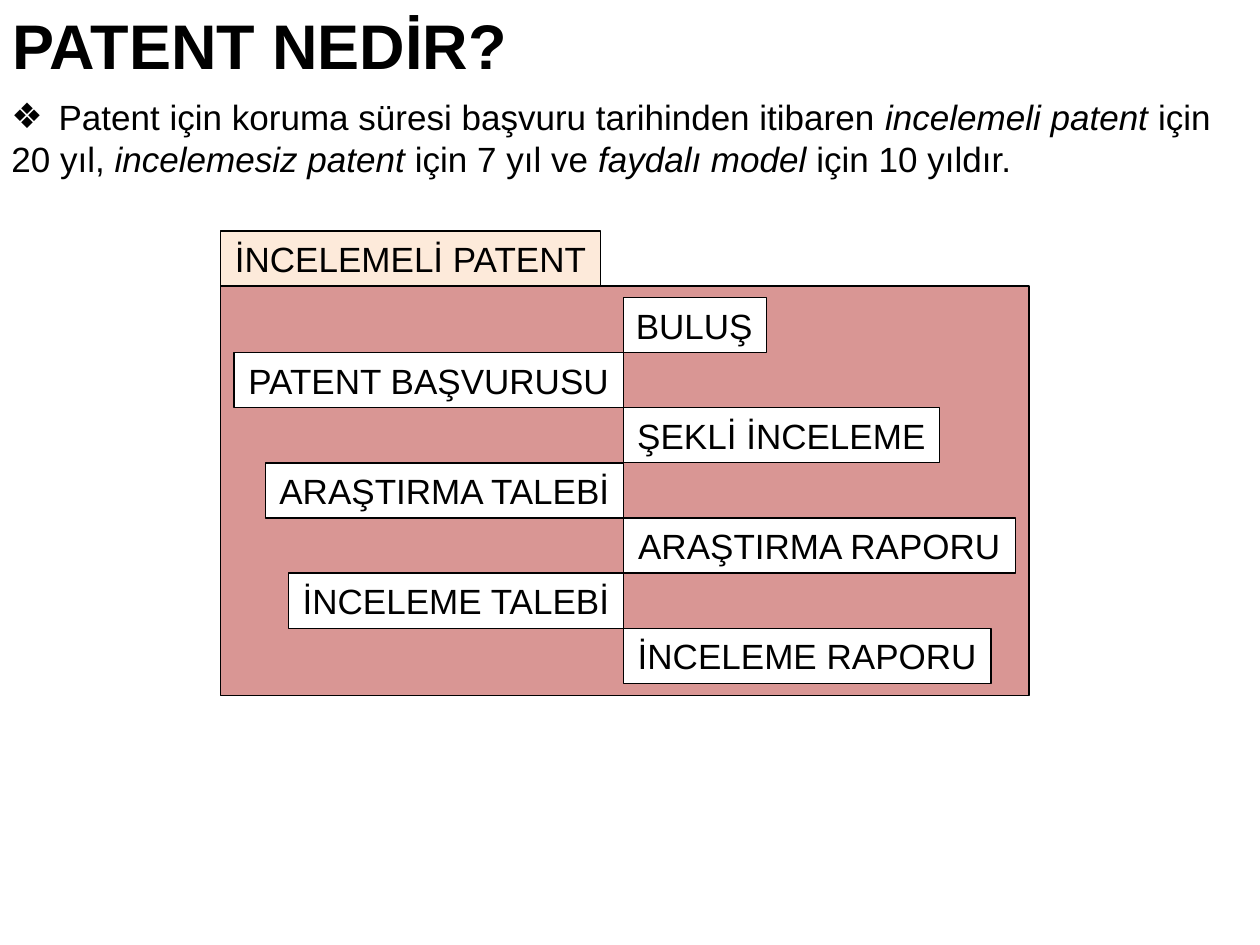
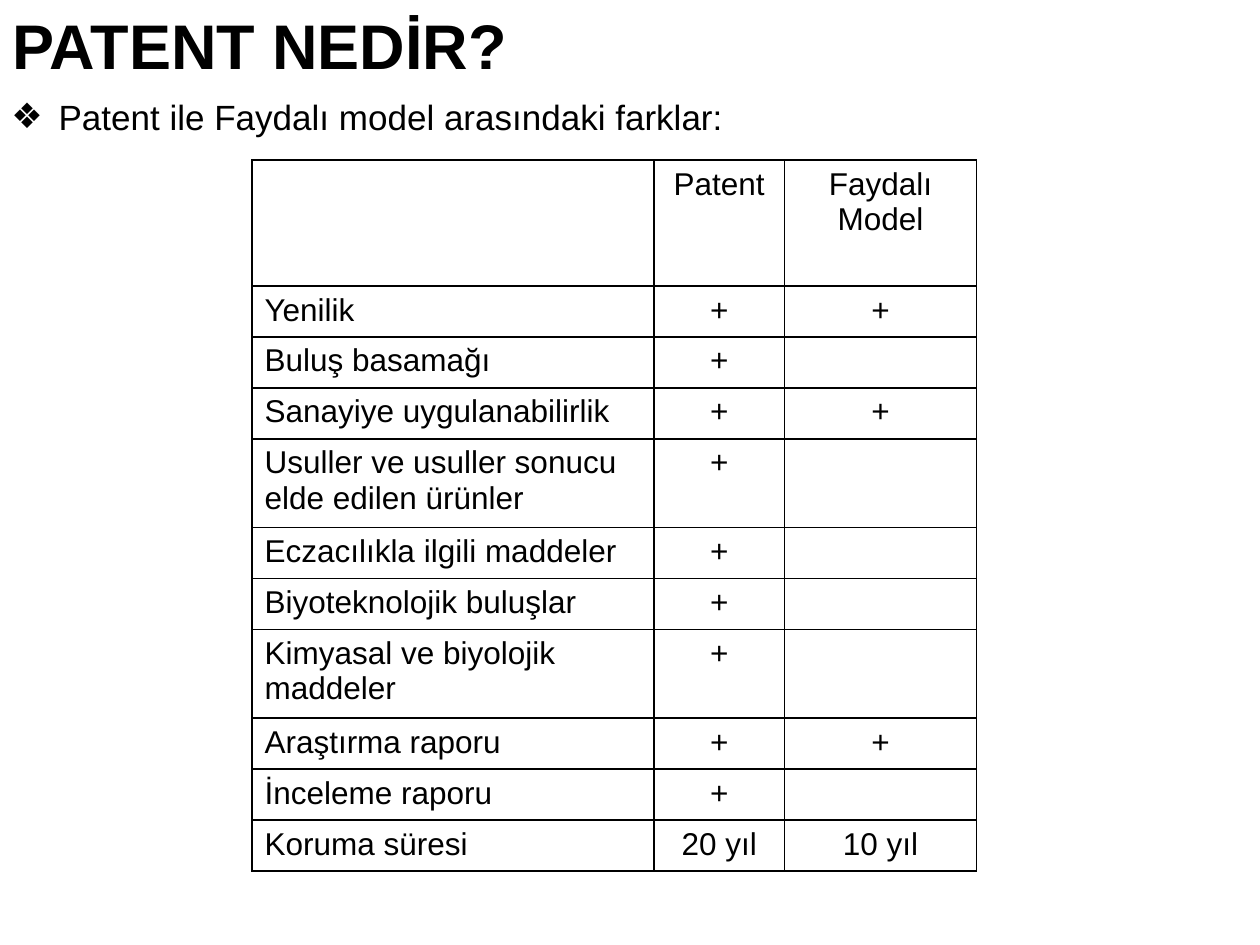
from dataclasses import dataclass

from lxml import etree
from pptx import Presentation
from pptx.dml.color import RGBColor
from pptx.enum.shapes import MSO_SHAPE
from pptx.enum.text import MSO_ANCHOR, MSO_AUTO_SIZE, PP_ALIGN
from pptx.oxml.ns import qn
from pptx.util import Pt

RECTANGLE = MSO_SHAPE.RECTANGLE
LEFT, CENTER = PP_ALIGN.LEFT, PP_ALIGN.CENTER
TOP, MIDDLE = MSO_ANCHOR.TOP, MSO_ANCHOR.MIDDLE
NO_AUTOFIT = MSO_AUTO_SIZE.NONE


@dataclass(frozen=True)
class Theme:
    font: str = "Arial"
    ink: RGBColor = RGBColor(0, 0, 0)
    paper: RGBColor = RGBColor(255, 255, 255)
    panel: RGBColor = RGBColor(0xD9, 0x96, 0x94)
    tab: RGBColor = RGBColor(0xFD, 0xEA, 0xDA)
    title_size: float = 36
    body_size: float = 20
    table_size: float = 18
    bullet: str = "❖"
    bullet_indent: float = 27


class Deck:
    """Holds the style and the slide being built."""

    def __init__(self, theme):
        self.theme = theme
        self.file = Presentation()
        self.file.slide_width, self.file.slide_height = Pt(720), Pt(540)
        self.slide = None

    def style(self, paragraph, size, align=LEFT, bold=False):
        paragraph.alignment = align
        font = paragraph.font
        font.name, font.size, font.bold = self.theme.font, Pt(size), bold
        font.color.rgb = self.theme.ink

    def place(self, placeholder, left, top, width, height):
        placeholder.left, placeholder.top = Pt(left), Pt(top)
        placeholder.width, placeholder.height = Pt(width), Pt(height)
        frame = placeholder.text_frame
        frame.word_wrap, frame.auto_size = True, NO_AUTOFIT
        frame.vertical_anchor = TOP
        return frame

    def new_slide(self, title):
        self.slide = self.file.slides.add_slide(self.file.slide_layouts[1])
        heading = self.place(self.slide.shapes.title, 0, 0, 720, 51)
        heading.text = title
        self.style(heading.paragraphs[0], self.theme.title_size, bold=True)

    def body(self, lines, width):
        """Each line is a list of (text, italic); the first line has the bullet."""
        frame = self.place(self.slide.placeholders[1], -0.7, 51, width, 55.5)
        for number, line in enumerate(lines):
            paragraph = frame.paragraphs[0] if number == 0 else frame.add_paragraph()
            for text, italic in line:
                run = paragraph.add_run()
                run.text, run.font.italic = text, italic
            paragraph.space_before = Pt(0)
            self.style(paragraph, self.theme.body_size)
            self.bullet(paragraph, shown=number == 0)

    def bullet(self, paragraph, shown):
        indent = Pt(self.theme.bullet_indent) if shown else 0
        properties = paragraph._p.get_or_add_pPr()
        properties.set("marL", str(indent))
        properties.set("indent", str(-indent))
        mark = etree.Element(qn("a:buChar" if shown else "a:buNone"))
        if shown:
            mark.set("char", self.theme.bullet)
        properties.find(qn("a:defRPr")).addprevious(mark)

    def box(self, shapes, left, top, width, height, fill, text="",
            align=CENTER, line=0.75):
        shape = shapes.add_shape(RECTANGLE, Pt(left), Pt(top), Pt(width), Pt(height))
        shape.shadow.inherit = False
        shape.fill.solid()
        shape.fill.fore_color.rgb = fill
        shape.line.color.rgb, shape.line.width = self.theme.ink, Pt(line)
        if text:
            frame = shape.text_frame
            frame.word_wrap, frame.vertical_anchor = False, MIDDLE
            frame.text = text
            self.style(frame.paragraphs[0], self.theme.body_size, align)

    def table(self, rows, left, top, widths, heights):
        table = self.slide.shapes.add_table(
            len(rows), len(widths), Pt(left), Pt(top),
            Pt(sum(widths)), Pt(sum(heights))).table
        table.first_row = table.horz_banding = False
        for column, width in zip(table.columns, widths):
            column.width = Pt(width)
        for row, height, texts in zip(table.rows, heights, rows):
            row.height = Pt(height)
            for number, (cell, text) in enumerate(zip(row.cells, texts)):
                cell.text = text
                self.style(cell.text_frame.paragraphs[0], self.theme.table_size,
                           CENTER if number else LEFT)
                self.borders(cell)
                cell.fill.background()

    def borders(self, cell):
        properties = cell._tc.get_or_add_tcPr()
        for side in "LRTB":
            edge = etree.SubElement(properties, qn(f"a:ln{side}"), w=str(Pt(1)))
            fill = etree.SubElement(edge, qn("a:solidFill"))
            etree.SubElement(fill, qn("a:srgbClr"), val=str(self.theme.ink))


TITLE = "PATENT NEDİR?"

# Steps of an examined patent with box widths, alternating right and left
STEPS = [
    ("BULUŞ", 82), ("PATENT BAŞVURUSU", 222.5), ("ŞEKLİ İNCELEME", 180.7),
    ("ARAŞTIRMA TALEBİ", 204.5), ("ARAŞTIRMA RAPORU", 224),
    ("İNCELEME TALEBİ", 191.3), ("İNCELEME RAPORU", 210.2),
]

DIFFERENCES = [
    ("", "Patent", "Faydalı Model"),
    ("Yenilik", "+", "+"),
    ("Buluş basamağı", "+", ""),
    ("Sanayiye uygulanabilirlik", "+", "+"),
    ("Usuller ve usuller sonucu elde edilen ürünler", "+", ""),
    ("Eczacılıkla ilgili maddeler", "+", ""),
    ("Biyoteknolojik buluşlar", "+", ""),
    ("Kimyasal ve biyolojik maddeler", "+", ""),
    ("Araştırma raporu", "+", "+"),
    ("İnceleme raporu", "+", ""),
    ("Koruma süresi", "20 yıl", "10 yıl"),
]


def protection_slide(deck):
    deck.new_slide(TITLE)
    deck.body([
        [("Patent için koruma süresi başvuru tarihinden itibaren ", False),
         ("incelemeli patent", True), (" için", False)],
        [("20 yıl, ", False), ("incelemesiz patent", True),
         (" için 7 yıl ve ", False), ("faydalı model ", True),
         ("için 10 yıldır.", False)],
    ], width=710.6)

    # Panel, steps on both sides of the axis, then the tab above
    theme, step_height, axis, first_top = deck.theme, 31.5, 356.2, 170
    diagram = deck.slide.shapes.add_group_shape().shapes
    deck.box(diagram, 126, 163.5, 462, 234, theme.panel, line=1)
    for number, (step, width) in enumerate(STEPS):
        deck.box(diagram, axis - width if number % 2 else axis,
                 first_top + number * step_height, width, step_height,
                 theme.paper, step, CENTER if number else LEFT)
    deck.box(diagram, 126, 132, 217.3, step_height, theme.tab, "İNCELEMELİ PATENT")


def differences_slide(deck):
    deck.new_slide(TITLE)
    deck.body([[("Patent ile Faydalı model arasındaki farklar:", False)]], width=424)

    # The header is tallest; long labels take two lines
    header, single, double = 72, 29.16, 50.6
    heights = [header] + [double if len(label) > 28 else single
                          for label, *_ in DIFFERENCES[1:]]
    deck.table(DIFFERENCES, 144, 91.5, [229.6, 74.8, 109.6], heights)


def main():
    deck = Deck(Theme())
    protection_slide(deck)
    differences_slide(deck)
    deck.file.save("out.pptx")


if __name__ == "__main__":
    main()
